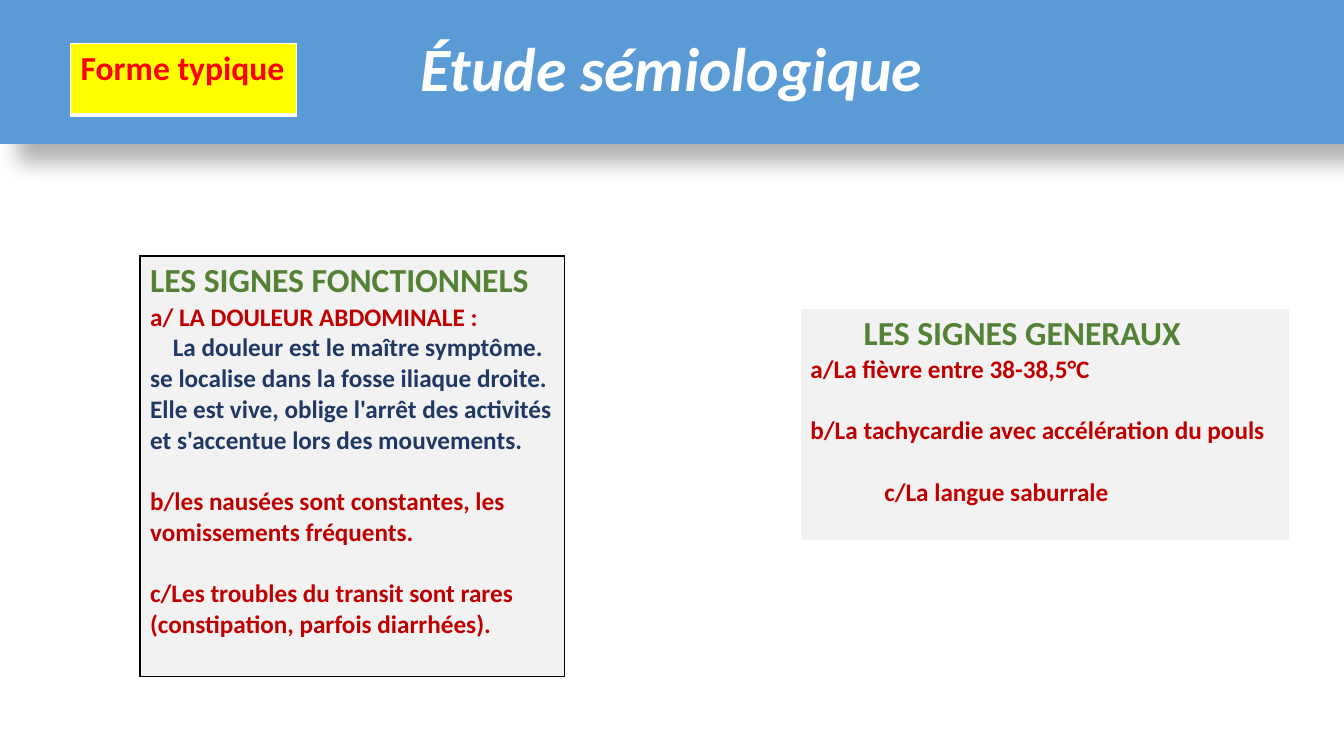
from dataclasses import dataclass

from lxml.etree import SubElement
from pptx import Presentation
from pptx.dml.color import RGBColor
from pptx.enum.shapes import MSO_SHAPE
from pptx.enum.text import MSO_ANCHOR, PP_ALIGN
from pptx.oxml.ns import qn
from pptx.slide import Slide
from pptx.table import _Cell
from pptx.text.text import _Paragraph
from pptx.util import Cm, Pt

COLORS = {
    "band": "5B9BD5", "white": "FFFFFF", "black": "000000", "yellow": "FFFF00",
    "red": "FF0000", "panel": "F2F2F2", "heading": "548235",
    "sign": "C00000", "detail": "203864",
}
WHITE_FRAME = {"L": 1, "R": 1, "T": 1, "B": 3}
BLACK_FRAME = {"L": 1, "R": 1, "T": 1, "B": 1}
BLANK_LINE = 22  # points, height of one 18 pt line


@dataclass
class Line:
    text: str
    color: str = "sign"
    size: int = 18
    before: int = 0
    indent: float = 0


@dataclass
class Panel:
    box: tuple[float, float, float, float]
    fill: str
    border: str
    frame: dict[str, int]
    lines: list[Line]


PANELS = [
    Panel((1.78, 1.09, 5.69, 1.8), "yellow", "white", WHITE_FRAME,
          [Line("Forme typique", "red", 24)]),
    Panel((3.53, 6.45, 10.69, 10.59), "panel", "black", BLACK_FRAME, [
        Line("LES SIGNES FONCTIONNELS", "heading", 24),
        Line("a/ LA DOULEUR ABDOMINALE :"),
        Line("La douleur est le maître symptôme. se localise dans la fosse iliaque "
             "droite. Elle est vive, oblige l'arrêt des activités et s'accentue lors "
             "des mouvements.", "detail", indent=0.57),
        Line("b/les nausées sont constantes, les vomissements fréquents.",
             before=BLANK_LINE),
        Line("c/Les troubles du transit sont rares (constipation, parfois diarrhées).",
             before=BLANK_LINE),
    ]),
    Panel((20.17, 7.77, 12.32, 5.89), "panel", "white", WHITE_FRAME, [
        Line("LES SIGNES GENERAUX", "heading", 24, indent=1.34),
        Line("a/La fièvre entre 38-38,5°C"),
        Line("b/La tachycardie avec accélération du pouls", before=BLANK_LINE),
        Line("c/La langue saburrale", before=BLANK_LINE, indent=1.86),
    ]),
]


def rgb(name: str) -> RGBColor:
    return RGBColor.from_string(COLORS[name])


def write(paragraph: _Paragraph, text: str, color: str, size: int,
          italic: bool = False) -> None:
    run = paragraph.add_run()
    run.text = text
    formats = {"name": "Calibri", "size": Pt(size), "bold": True, "italic": italic}
    for attribute, value in formats.items():
        setattr(run.font, attribute, value)
    run.font.color.rgb = rgb(color)


def add_solid(parent, color: str):
    fill = SubElement(parent, qn("a:solidFill"))
    return SubElement(fill, qn("a:srgbClr"), val=COLORS[color])


def draw_borders(cell: _Cell, color: str, frame: dict[str, int]) -> None:
    properties = cell._tc.get_or_add_tcPr()
    for side, width in frame.items():
        edge = SubElement(properties, qn(f"a:ln{side}"), w=str(Pt(width)))
        add_solid(edge, color)


def draw_band(slide: Slide, text: str) -> None:
    band = slide.shapes.add_shape(MSO_SHAPE.RECTANGLE, 0, 0, Cm(33.87), Cm(3.63))
    band.fill.solid()
    band.fill.fore_color.rgb = rgb("band")
    band.line.fill.background()
    # Soft shadow below the band
    effects = SubElement(band._element.spPr, qn("a:effectLst"))
    shadow = SubElement(effects, qn("a:outerShdw"), blurRad=str(Pt(15)),
                        dist=str(Pt(18)), dir=str(45 * 60000), algn="tl")
    tint = SubElement(shadow, qn("a:srgbClr"), val=COLORS["black"])
    SubElement(tint, qn("a:alpha"), val="30000")
    # Title text
    band.text_frame.vertical_anchor = MSO_ANCHOR.MIDDLE
    title = band.text_frame.paragraphs[0]
    title.alignment = PP_ALIGN.CENTER
    title.line_spacing = 0.9
    write(title, text, "white", 44, italic=True)


def draw_panel(slide: Slide, panel: Panel) -> None:
    table = slide.shapes.add_table(1, 1, *map(Cm, panel.box)).table
    for option in ("first_row", "horz_banding"):
        setattr(table, option, False)
    cell = table.cell(0, 0)
    draw_borders(cell, panel.border, panel.frame)
    cell.fill.solid()
    cell.fill.fore_color.rgb = rgb(panel.fill)
    for index, line in enumerate(panel.lines):
        frame = cell.text_frame
        paragraph = frame.add_paragraph() if index else frame.paragraphs[0]
        paragraph.space_before = Pt(line.before)
        paragraph._p.get_or_add_pPr().set("indent", str(Cm(line.indent)))
        write(paragraph, line.text, line.color, line.size)


def main() -> None:
    deck = Presentation()
    deck.slide_width, deck.slide_height = Cm(33.87), Cm(19.05)
    slide = deck.slides.add_slide(deck.slide_layouts[6])
    draw_band(slide, "Étude sémiologique")
    for panel in PANELS:
        draw_panel(slide, panel)
    deck.save("out.pptx")


if __name__ == "__main__":
    main()
